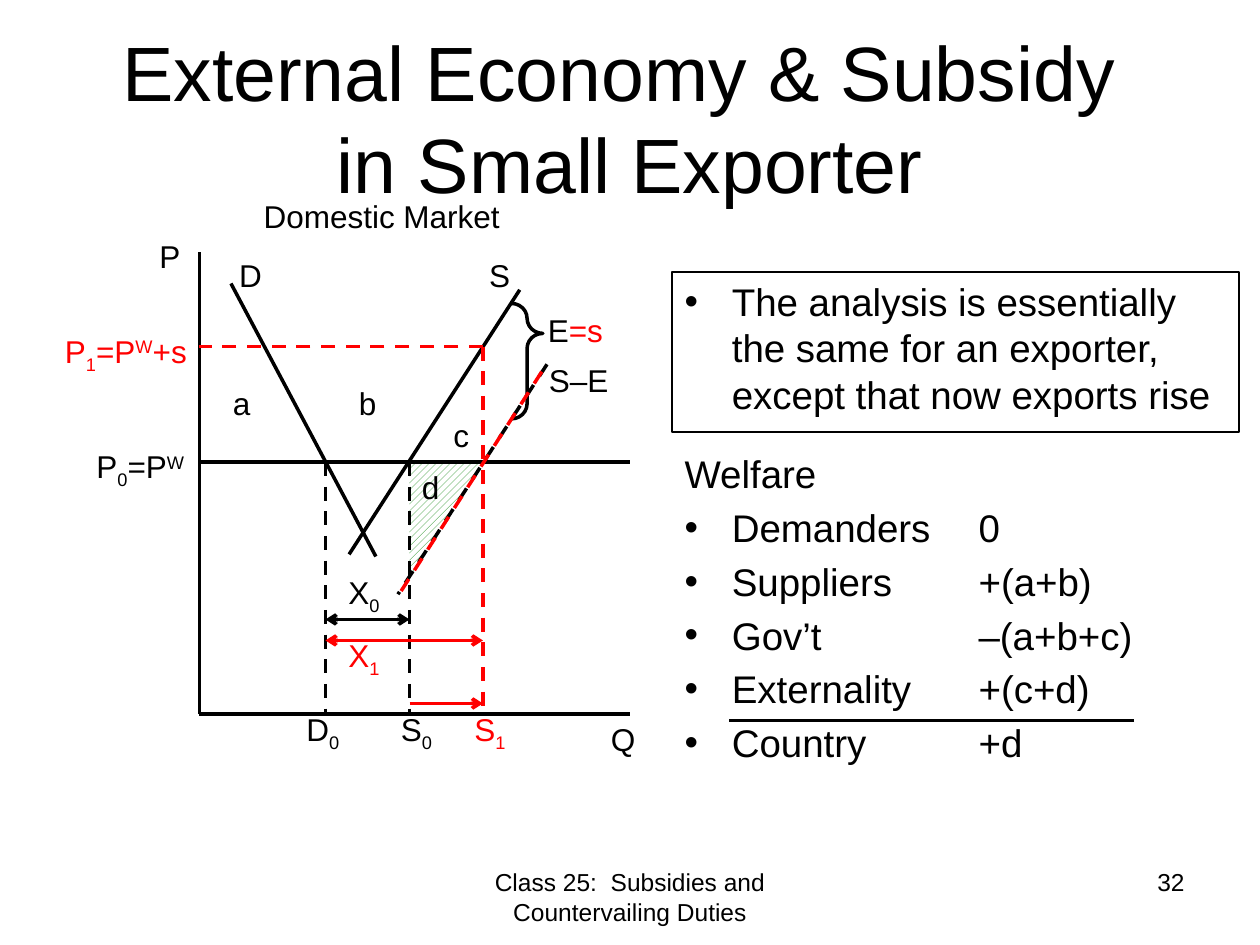
from dataclasses import dataclass

from lxml.etree import SubElement
from pptx import Presentation
from pptx.dml.color import RGBColor
from pptx.enum.dml import MSO_LINE, MSO_PATTERN
from pptx.enum.shapes import MSO_CONNECTOR, MSO_SHAPE
from pptx.enum.text import MSO_ANCHOR, MSO_AUTO_SIZE, PP_ALIGN
from pptx.oxml.ns import qn
from pptx.util import Inches, Pt


@dataclass(frozen=True)
class Theme:
    font: str = "Arial"
    ink: RGBColor = RGBColor(0, 0, 0)
    red: RGBColor = RGBColor(255, 0, 0)
    green: RGBColor = RGBColor(0, 128, 0)
    paper: RGBColor = RGBColor(255, 255, 255)
    title: int = 44
    body: int = 22
    label: int = 18
    footer: int = 14
    stroke: float = 2
    frame: float = 0.75


THEME = Theme()
CELLS_PER_INCH = 12  # every position below is in grid cells

# Key prices (rows) and quantities (columns) of the diagram
AXIS_LEFT, AXIS_RIGHT, AXIS_TOP, AXIS_BOTTOM = 19, 60, 24, 68
PRICE_WORLD, PRICE_SUBSIDY = 44, 33
DEMAND_0, SUPPLY_0, SUPPLY_1 = 31, 39, 46


@dataclass(frozen=True)
class Label:
    """Text in spans parted by |, where _ opens a subscript and ^ a superscript."""
    text: str
    column: float
    row: float
    width: float
    height: float = 4.8
    color: RGBColor = THEME.ink
    size: int = THEME.label
    align: PP_ALIGN = PP_ALIGN.LEFT
    wrap: bool = True


@dataclass(frozen=True)
class Line:
    start: tuple[float, float]
    end: tuple[float, float]
    color: RGBColor = THEME.ink
    dashed: bool = False
    arrows: tuple[str, ...] = ()


LINES = [
    Line((AXIS_LEFT, AXIS_BOTTOM), (AXIS_RIGHT, AXIS_BOTTOM)),
    Line((AXIS_LEFT, AXIS_BOTTOM), (AXIS_LEFT, AXIS_TOP)),
    Line((49.5, 27.6), (33.25, 52.8)),
    Line((35.8, 53), (22, 27)),
    Line((108, 68.6), (69.4, 68.6)),
    Line((AXIS_LEFT, PRICE_WORLD), (AXIS_RIGHT, PRICE_WORLD)),
    Line((52.1, 34.7), (37.9, 56.6), dashed=True),
    Line((DEMAND_0, PRICE_WORLD), (DEMAND_0, AXIS_BOTTOM), dashed=True),
    Line((SUPPLY_0, PRICE_WORLD), (SUPPLY_0, AXIS_BOTTOM), dashed=True),
    Line((SUPPLY_1, PRICE_SUBSIDY), (SUPPLY_1, AXIS_BOTTOM), THEME.red, True),
    Line((51.6, 35.4), (38.2, 56.3), THEME.red, True),
    Line((SUPPLY_1, PRICE_SUBSIDY), (AXIS_LEFT, PRICE_SUBSIDY), THEME.red, True),
    Line((DEMAND_0, 59), (SUPPLY_0, 59), arrows=("headEnd", "tailEnd")),
    Line((DEMAND_0, 61), (SUPPLY_1, 61), THEME.red, arrows=("headEnd", "tailEnd")),
    Line((SUPPLY_0, 67), (SUPPLY_1, 67), THEME.red, arrows=("tailEnd",)),
]

LABELS = [
    Label("P", 14, 22, 9),
    Label("Q", 57, 68, 9),
    Label("D", 21.6, 23.8, 6),
    Label("S", 45.4, 23.8, 6),
    Label("S–E", 51.1, 33.8, 8.8),
    Label("E", 51, 29, 11),
    Label("=s", 53, 29, 6, color=THEME.red),
    Label("P|_0|=P|^W", 8, 42, 11.8),
    Label("P|_1|=P|^W|+s", 5, 31, 14.9, color=THEME.red),
    Label("a", 21, 36, 4),
    Label("b", 33, 36, 4),
    Label("c", 42, 39, 4),
    Label("d", 39, 44, 4),
    Label("S|_0", 37, 67, 5.5, wrap=False),
    Label("S|_1", 44, 67, 5.5, color=THEME.red, wrap=False),
    Label("D|_0", 28, 67, 5.8, wrap=False),
    Label("X|_0", 32, 54, 5.5, wrap=False),
    Label("X|_1", 32, 60, 5.5, color=THEME.red, wrap=False),
    Label("Domestic Market", 19.6, 18.2, 33.5, align=PP_ALIGN.CENTER),
    Label("Class 25:  Subsidies and Countervailing Duties", 41, 82, 38, 6.2,
          size=THEME.footer, align=PP_ALIGN.CENTER),
    Label("32", 86, 82, 28, 6.2, size=THEME.footer, align=PP_ALIGN.RIGHT),
]

WELFARE = [("Demanders", "0"), ("Suppliers", "+(a+b)"), ("Gov’t", "–(a+b+c)"),
           ("Externality", "+(c+d)"), ("Country", "+d")]
WELFARE_TAB = 28


def cells(count: float) -> int:
    return Inches(count / CELLS_PER_INCH)


def style(span, size: int, color: RGBColor = THEME.ink) -> None:
    span.font.name = THEME.font
    span.font.size = Pt(size)
    span.font.color.rgb = color


def draw_line(page, line: Line) -> None:
    connector = page.shapes.add_connector(
        MSO_CONNECTOR.STRAIGHT, *map(cells, line.start + line.end))
    connector.line.color.rgb = line.color
    connector.line.width = Pt(THEME.stroke)
    if line.dashed:
        connector.line.dash_style = MSO_LINE.DASH
    properties = connector._element.spPr
    for end in line.arrows:
        SubElement(properties.find(qn("a:ln")), qn(f"a:{end}"), type="arrow")
    SubElement(properties, qn("a:effectLst"))


def draw_label(page, label: Label) -> None:
    box = page.shapes.add_textbox(
        *map(cells, (label.column, label.row, label.width, label.height)))
    frame = box.text_frame
    frame.word_wrap = label.wrap
    if label.size == THEME.label:
        frame.auto_size = MSO_AUTO_SIZE.SHAPE_TO_FIT_TEXT
    para = frame.paragraphs[0]
    para.alignment = label.align
    for part in label.text.split("|"):
        span = para.add_run()
        span.text = part.lstrip("_^")
        style(span, label.size, label.color)
        baseline = {"_": "-25000", "^": "30000"}.get(part[0])
        if baseline:
            span.font._element.set("baseline", baseline)


def fill_placeholder(box, text: str, area: tuple[float, ...], size: int) -> None:
    box.left, box.top, box.width, box.height = map(cells, area)
    frame = box.text_frame
    frame.text = text
    frame.auto_size = MSO_AUTO_SIZE.NONE
    for para in frame.paragraphs:
        for span in para.runs:
            style(span, size)


def align_welfare(frame) -> None:
    """Take the bullet off the heading and line up the amounts at a tab stop."""
    heading, *entries = frame.paragraphs
    properties = heading._p.get_or_add_pPr()
    properties.set("marL", "0")
    properties.set("indent", "0")
    SubElement(properties, qn("a:buNone"))
    for para in entries:
        tabs = SubElement(para._p.get_or_add_pPr(), qn("a:tabLst"))
        SubElement(tabs, qn("a:tab"), pos=str(cells(WELFARE_TAB)), algn="l")


def draw_shapes(page) -> None:
    gain = page.shapes.add_shape(
        MSO_SHAPE.RIGHT_TRIANGLE, *map(cells, (SUPPLY_0, PRICE_WORLD, 7, 11)))
    gain.shadow.inherit = False
    gain.fill.patterned()
    gain.fill.pattern = MSO_PATTERN.WIDE_UPWARD_DIAGONAL
    gain.fill.fore_color.rgb = THEME.green
    gain.fill.back_color.rgb = THEME.paper
    gain.line.fill.background()
    gain._element.spPr.find(qn("a:xfrm")).set("flipV", "1")

    brace = page.shapes.add_shape(
        MSO_SHAPE.RIGHT_BRACE, *map(cells, (48.7, 28.9, 3, 11)))
    brace.shadow.inherit = False
    brace.fill.background()
    brace.line.color.rgb = THEME.ink
    brace.line.width = Pt(THEME.stroke)
    brace.adjustments[0], brace.adjustments[1] = 0.6, 0.26


def main() -> None:
    deck = Presentation()
    deck.slide_width, deck.slide_height = cells(120), cells(90)
    page = deck.slides.add_slide(deck.slide_layouts.get_by_name("Two Content"))
    title, analysis, welfare = list(page.placeholders)[:3]

    fill_placeholder(title, "External Economy & Subsidy \vin Small Exporter",
                     (6, 3.6, 108, 15), THEME.title)
    title.text_frame.vertical_anchor = MSO_ANCHOR.MIDDLE
    fill_placeholder(analysis, "The analysis is essentially the same for an exporter, "
                     "except that now exports rise", (64, 25.9, 54, 15.25), THEME.body)
    analysis.line.color.rgb = THEME.ink
    analysis.line.width = Pt(THEME.frame)
    entries = ["Welfare", *("\t".join(entry) for entry in WELFARE)]
    fill_placeholder(welfare, "\n".join(entries), (64, 42.25, 54, 30), THEME.body)
    align_welfare(welfare.text_frame)

    draw_shapes(page)
    for line in LINES:
        draw_line(page, line)
    for label in LABELS:
        draw_label(page, label)
    deck.save("out.pptx")


if __name__ == "__main__":
    main()
